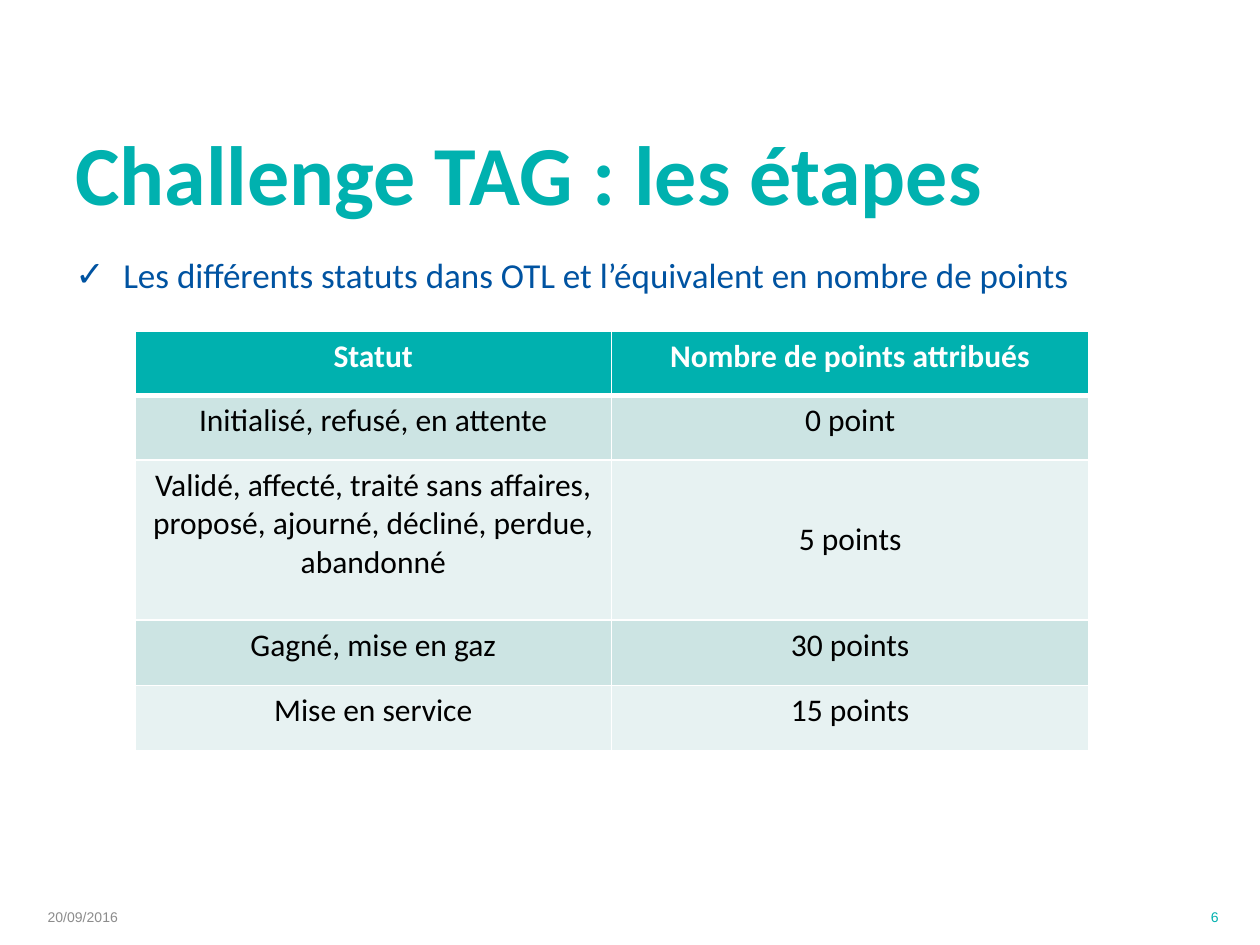
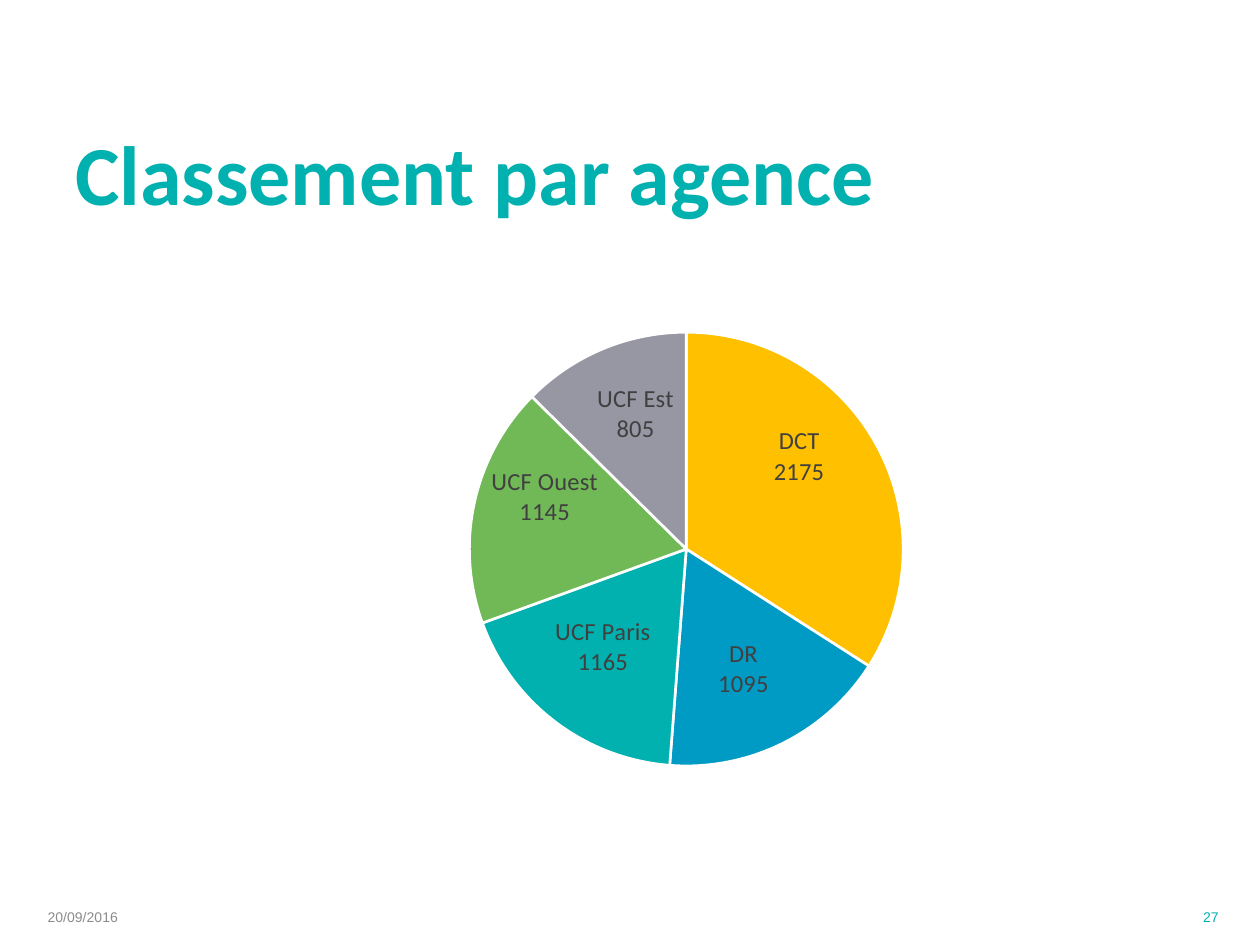
from copy import deepcopy

from lxml import etree
from pptx import Presentation
from pptx.chart import data as cd
from pptx.dml import color as col
from pptx.enum import chart as ch, text as tx
from pptx.oxml import ns
from pptx.util import Inches, Pt

TEAL, BLUE, GREY, WHITE, BLACK = "00B1AF", "0053A1", "8C8C8C", "FFFFFF", "000000"
LABEL = "404040"
BANDS = ["CCE4E3", "E7F2F2"]
DATE = "20/09/2016"
MID, TOP = tx.MSO_ANCHOR.MIDDLE, tx.MSO_ANCHOR.TOP
LEFT, CENTER, RIGHT = tx.PP_ALIGN.LEFT, tx.PP_ALIGN.CENTER, tx.PP_ALIGN.RIGHT

STATUS = [
    ("Statut", "Nombre de points attribués"),
    ("Initialisé, refusé, en attente", "0 point"),
    ("Validé, affecté, traité sans affaires, proposé, ajourné, décliné, "
     "perdue, abandonné", "5 points"),
    ("Gagné, mise en gaz", "30 points"),
    ("Mise en service", "15 points"),
]
HEIGHTS = [0.51, 0.51, 1.27, 0.52, 0.52]
# name, points, colour, label shift as shares of the chart box
AGENCIES = [
    ("DCT", 2175, "FFC000", (0.02, -0.07)),
    ("DR", 1095, "009BC4", (0.01, 0.04)),
    ("UCF Paris", 1165, TEAL, (-0.02, 0.02)),
    ("UCF Ouest", 1145, "71B857", (-0.04, -0.05)),
    ("UCF Est", 805, "9796A3", (-0.01, -0.06)),
]


def rgb(code):
    return col.RGBColor.from_string(code)


def sub(parent, tag, **attrs):
    node = etree.SubElement(parent, ns.qn(tag))
    for key, val in attrs.items():
        node.set(key, str(val))
    return node


def style(font, size, color, bold=False, face="Calibri"):
    font.size, font.bold, font.name = Pt(size), bold, face
    font.color.rgb = rgb(color)


def write(frame, words, size, color, bold=False, face="Calibri",
          align=LEFT, anchor=TOP, bullet=None):
    """Fill a text frame with one formatted paragraph."""
    frame.word_wrap = True
    frame.vertical_anchor = anchor
    para = frame.paragraphs[0]
    para.alignment = align
    if bullet:
        props = para._p.get_or_add_pPr()
        props.set("marL", str(Inches(0.38)))
        props.set("indent", str(-Inches(0.38)))
        sub(props, "a:buFont", typeface="Arial")
        sub(props, "a:buChar", char=bullet)
    run = para.add_run()
    run.text = words
    style(run.font, size, color, bold, face)


def put(slide, box, words, size, color, **fmt):
    area = slide.shapes.add_textbox(*map(Inches, box))
    write(area.text_frame, words, size, color, **fmt)


def edge(cell, side, width):
    line = sub(cell._tc.get_or_add_tcPr(), f"a:{side}", w=Pt(width))
    sub(sub(line, "a:solidFill"), "a:srgbClr", val=WHITE)


def frame(deck, title, number, width):
    """Add a slide with its title and footer."""
    slide = deck.slides.add_slide(deck.slide_layouts[6])
    put(slide, (0.5, 1.02, width, 0.69), title, 48, TEAL, bold=True, anchor=MID)
    put(slide, (0.28, 7.08, 2.33, 0.4), DATE, 8, GREY, face="Arial", anchor=MID)
    put(slide, (7.44, 7.08, 2.33, 0.4), number, 8, TEAL, face="Arial",
        align=RIGHT, anchor=MID)
    return slide


def grid(slide, box):
    table = slide.shapes.add_table(len(STATUS), 2, *map(Inches, box)).table
    for column in table.columns:
        column.width = Inches(box[2] / 2)
    for i, (row, high) in enumerate(zip(STATUS, HEIGHTS)):
        table.rows[i].height = Inches(high)
        head = i == 0
        for j, words in enumerate(row):
            cell = table.cell(i, j)
            write(cell.text_frame, words, 18, WHITE if head else BLACK,
                  bold=head, align=CENTER)
            cell.vertical_anchor = MID if (i, j) == (2, 1) else TOP
            for side in ("lnL", "lnR", "lnT", "lnB"):
                thick = (head and side == "lnB") or (i == 1 and side == "lnT")
                edge(cell, side, 3 if thick else 1)
            cell.fill.solid()
            cell.fill.fore_color.rgb = rgb(TEAL if head else BANDS[(i - 1) % 2])


def pie(slide, box):
    names, points, colors, shifts = zip(*AGENCIES)
    data = cd.CategoryChartData()
    data.categories = names
    data.add_series("Series 1", points)
    chart = slide.shapes.add_chart(ch.XL_CHART_TYPE.PIE, *map(Inches, box), data).chart
    chart.has_legend = chart.has_title = False
    style(chart.font, 16, BLACK)
    plot = chart.plots[0]
    plot.vary_by_categories = True
    series = plot.series[0]
    for i, color in enumerate(colors):
        form = series.points[i].format
        form.fill.solid()
        form.fill.fore_color.rgb = rgb(color)
        form.line.color.rgb = rgb(WHITE)
        form.line.width = Pt(1.5)
    tag(series.data_labels, shifts)
    area = chart._chartSpace.chart.plotArea
    for old in area.findall(ns.qn("c:layout")):
        area.remove(old)
    area.insert(0, layout(0.29, 0.13, 0.49, 0.75))


def tag(labels, shifts):
    """Format the slice labels and move each by its shift."""
    labels.show_category_name = labels.show_value = True
    labels.show_percentage = False
    labels.position = ch.XL_LABEL_POSITION.CENTER
    style(labels.font, 14, LABEL)
    group = labels._element
    mark = etree.Element(ns.qn("c:separator"))
    mark.text = "\n"
    group.find(ns.qn("c:showBubbleSize")).addnext(mark)
    shared = [node for node in group if node.tag != ns.qn("c:showLeaderLines")]
    for i, shift in enumerate(shifts):
        label = etree.Element(ns.qn("c:dLbl"))
        sub(label, "c:idx", val=i)
        label.append(layout(*shift))
        label.extend(deepcopy(node) for node in shared)
        group.insert(i, label)


def layout(left, top, *size):
    """Give a plot area its place, or without a size, a label its shift."""
    node = etree.Element(ns.qn("c:layout"))
    hand = sub(node, "c:manualLayout")
    if size:
        sub(hand, "c:layoutTarget", val="inner")
        sub(hand, "c:xMode", val="edge")
        sub(hand, "c:yMode", val="edge")
    for key, val in zip("xywh", (left, top, *size)):
        sub(hand, f"c:{key}", val=val)
    return node


def steps(deck):
    slide = frame(deck, "Challenge TAG : les étapes", "6", 8.49)
    put(slide, (0.5, 1.96, 8.49, 4.16),
        "Les différents statuts dans OTL et l’équivalent en nombre de points",
        20, BLUE, bullet="✓")
    grid(slide, (1.07, 2.63, 7.57, sum(HEIGHTS)))


def ranks(deck):
    slide = frame(deck, "Classement par agence", "27", 7.65)
    pie(slide, (1.67, 2.04, 7.06, 4.59))


def main():
    deck = Presentation()
    deck.slide_width, deck.slide_height = Inches(10), Inches(7.5)
    steps(deck)
    ranks(deck)
    deck.save("out.pptx")


if __name__ == "__main__":
    main()
